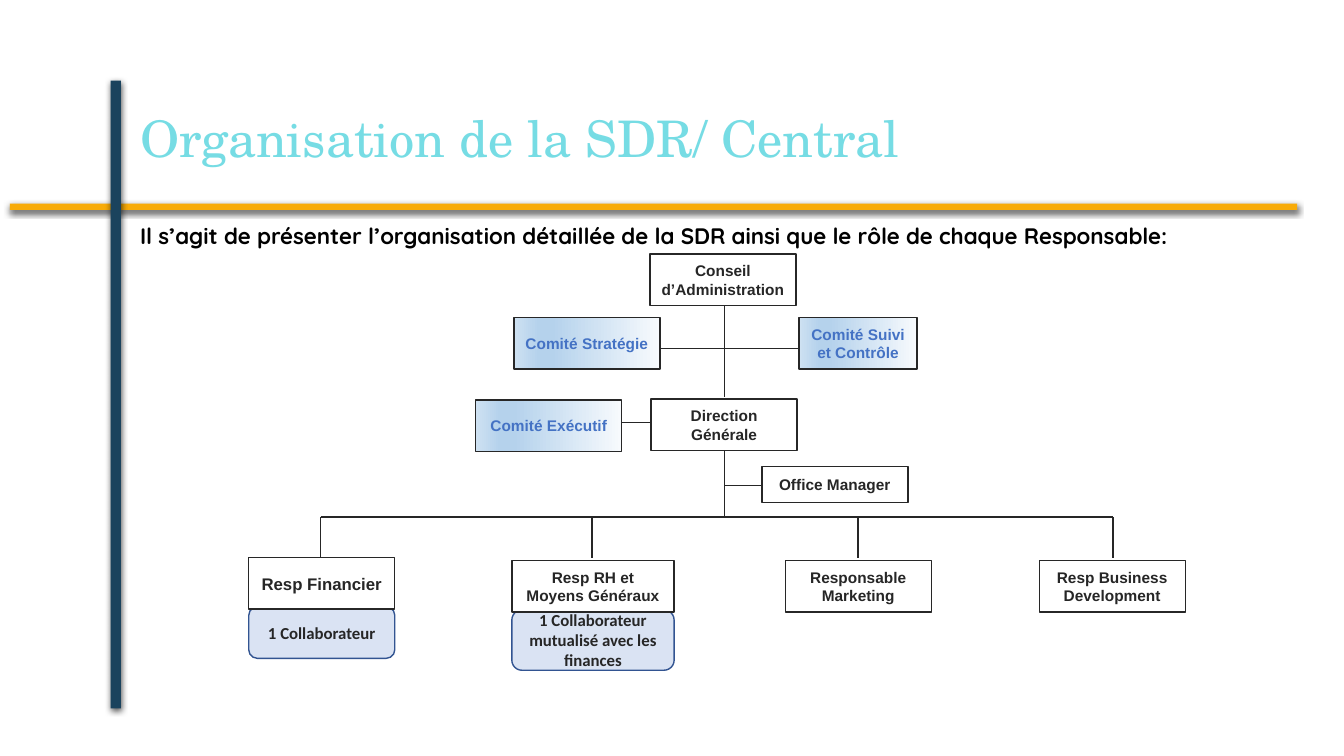
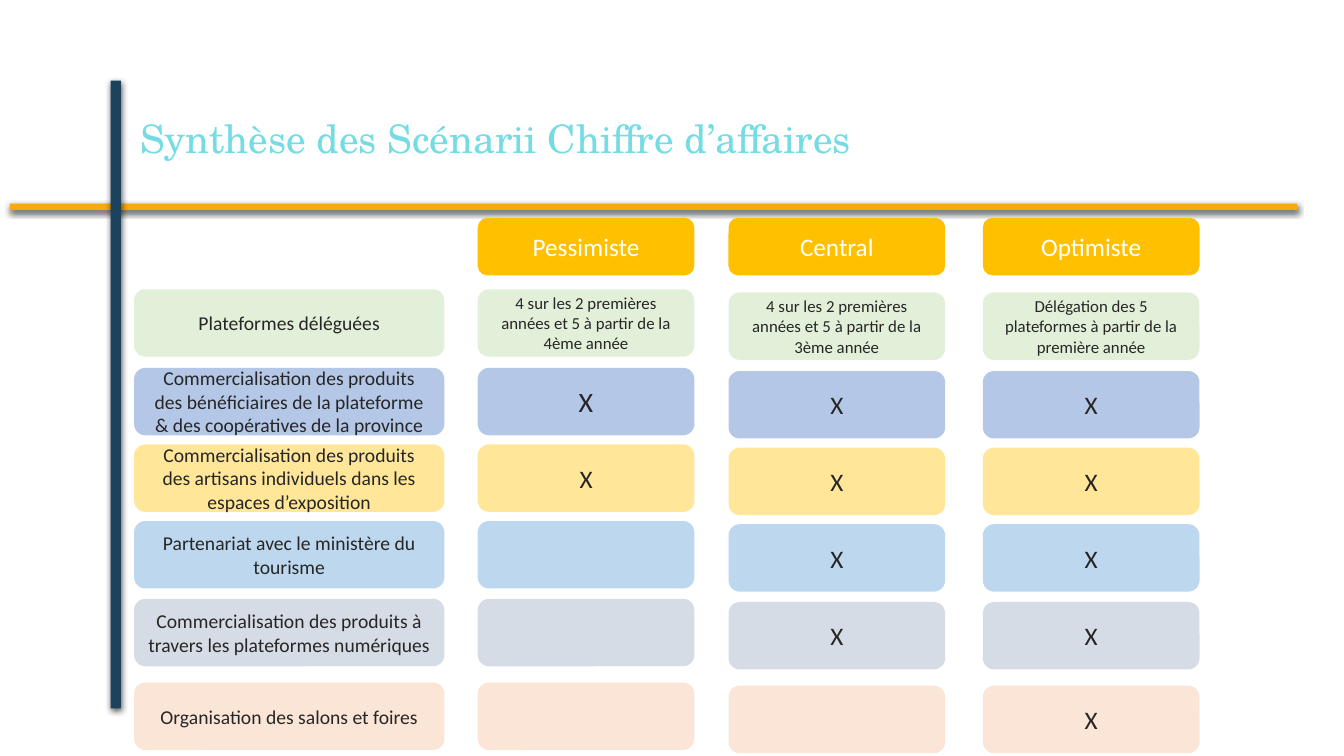
from dataclasses import dataclass

from lxml import etree
from pptx import Presentation
from pptx import util as u
from pptx.dml import color
from pptx.enum import shapes, text
from pptx.oxml import ns


@dataclass(frozen=True)
class Theme:
    gold: str = "F8AB08"
    navy: str = "1B435D"
    aqua: str = "76DCE4"
    ink: str = "262626"
    edge: str = "272727"
    white: str = "FFFFFF"
    black: str = "000000"
    blue: str = "4472C4"
    pale: str = "DAE3F3"
    rim: str = "325491"
    amber: str = "FFC000"
    fade: tuple = ((0, "F7FAFD"), (74, "B5D2EC"), (83, "B5D2EC"), (100, "CEE1F2"))
    serif: str = "TeX Gyre Schola"
    lead: str = "Quicksand"
    sans: str = "Arial"
    plain: str = "Calibri"
    small: float = 11
    note: float = 12
    label: float = 14
    intro: float = 16
    mark: float = 18
    large: float = 20
    title: float = 36
    subtle: float = 28
    thin: float = 1
    thick: float = 1.25


T = Theme()
RECT = shapes.MSO_SHAPE.RECTANGLE
ROUND = shapes.MSO_SHAPE.ROUNDED_RECTANGLE


def cm(*sizes):
    return [u.Cm(size) for size in sizes]


def rgb(code):
    return color.RGBColor.from_string(code)


def child(node, tag, **attrs):
    return etree.SubElement(node, ns.qn(tag), {k: str(v) for k, v in attrs.items()})


def write(para, words, size, font, tint, bold=False):
    run = para.add_run()
    run.text = words
    run.font.size = u.Pt(size)
    run.font.name = font
    run.font.bold = bold
    run.font.color.rgb = rgb(tint)


def blend(shape, stops):
    shape.fill.gradient()
    shape.fill.gradient_angle = 180
    group = shape.element.spPr.find(".//" + ns.qn("a:gsLst"))
    for stop in list(group):
        group.remove(stop)
    for place, code in stops:
        stop = child(group, "a:gs", pos=place * 1000)
        child(stop, "a:srgbClr", val=code)


def box(slide, kind, place, fill, line=None):
    shape = slide.shapes.add_shape(kind, *cm(*place))
    shape.shadow.inherit = False
    if isinstance(fill, tuple):
        blend(shape, fill)
    else:
        shape.fill.solid()
        shape.fill.fore_color.rgb = rgb(fill)
    if line:
        shape.line.color.rgb = rgb(line)
        shape.line.width = u.Pt(T.thin)
    else:
        shape.line.fill.background()
    return shape


def card(slide, kind, place, fill, line, words, size, font, tint, bold=False):
    frame = box(slide, kind, place, fill, line).text_frame
    frame.word_wrap = True
    frame.vertical_anchor = text.MSO_ANCHOR.MIDDLE
    para = frame.paragraphs[0]
    para.alignment = text.PP_ALIGN.CENTER
    if words:
        write(para, words, size, font, tint, bold)


def band(slide, place, fill):
    shape = box(slide, RECT, place, fill)
    glow = shape.element.spPr.find(ns.qn("a:effectLst"))
    shade = child(glow, "a:outerShdw", blurRad=u.Pt(4.5), dist=u.Pt(1.5),
                  dir=5400000, algn="ctr", rotWithShape=0)
    tone = child(shade, "a:srgbClr", val=T.black)
    child(tone, "a:alpha", val=63000)


def link(slide, start, end, width):
    wire = slide.shapes.add_connector(shapes.MSO_CONNECTOR.STRAIGHT, *cm(*start, *end))
    wire.line.color.rgb = rgb(T.ink)
    wire.line.width = u.Pt(width)
    child(wire.element.spPr, "a:effectLst")


def label(slide, place, anchor, *style):
    frame = slide.shapes.add_textbox(*cm(*place)).text_frame
    frame.word_wrap = True
    frame.vertical_anchor = anchor
    para = frame.paragraphs[0]
    para.line_spacing = 0.9
    write(para, *style)


def start(deck, title, size):
    slide = deck.slides.add_slide(deck.slide_layouts[6])
    band(slide, (0.25, 5.13, 32.44, 0.16), T.gold)
    band(slide, (2.79, 2.03, 0.26, 15.82), T.navy)
    label(slide, (3.28, 2.03, 29.21, 3.05), text.MSO_ANCHOR.MIDDLE,
          title, size, T.serif, T.aqua)
    return slide


def chart(deck):
    slide = start(deck, "Organisation de la SDR/ Central", T.title)
    label(slide, (3.28, 5.56, 29.21, 1.3), text.MSO_ANCHOR.TOP,
          "Il s’agit de présenter l’organisation détaillée de la SDR ainsi que "
          "le rôle de chaque Responsable:", T.intro, T.lead, T.black, True)

    helpers = [
        ((6.27, 15.29, 3.68, 1.3), "1 Collaborateur"),
        ((12.9, 15.37, 4.09, 1.52), "1 Collaborateur mutualisé avec les finances"),
    ]
    for place, words in helpers:
        card(slide, ROUND, place, T.pale, T.rim, words, T.note, T.plain, T.ink, True)

    trunk, bus = 18.26, 13.03
    drops = [8.08, 14.91, 21.62, 28.04]
    link(slide, (15.52, 10.64), (16.48, 10.64), T.thin)
    link(slide, (16.54, 8.79), (21.79, 8.79), T.thin)
    link(slide, (trunk, 12.24), (19.2, 12.24), T.thin)
    link(slide, (drops[0], bus), (drops[-1], bus), T.thin)
    link(slide, (trunk, 7.54), (trunk, 10.01), T.thick)
    link(slide, (trunk, 11.33), (trunk, bus), T.thick)
    for left in drops:
        link(slide, (left, bus), (left, 14.07), T.thick)

    boards = [
        ((20.14, 8, 2.97, 1.3), "Comité Suivi et Contrôle"),
        ((11.99, 10.08, 3.68, 1.3), "Comité Exécutif"),
        ((12.95, 8, 3.68, 1.3), "Comité Stratégie"),
    ]
    for place, words in boards:
        card(slide, RECT, place, T.fade, T.edge, words, T.small, T.sans, T.blue, True)

    posts = [
        ((16.38, 6.4, 3.68, 1.3), "Conseil d’Administration", T.small),
        ((16.41, 10.06, 3.68, 1.3), "Direction Générale", T.small),
        ((19.2, 11.76, 3.68, 0.91), "Office Manager", T.small),
        ((6.27, 14.05, 3.68, 1.3), "Resp Financier", T.note),
        ((12.9, 14.12, 4.09, 1.3), "Resp RH et Moyens Généraux", T.small),
        ((19.79, 14.12, 3.68, 1.3), "Responsable Marketing", T.small),
        ((26.19, 14.12, 3.68, 1.3), "Resp Business Development", T.small),
    ]
    for place, words, size in posts:
        card(slide, RECT, place, T.white, T.edge, words, size, T.sans, T.ink, True)


def matrix(deck):
    slide = start(deck, "Synthèse des Scénarii Chiffre d’affaires", T.subtle)
    cols = [(12.04, 0, "Pessimiste"), (18.36, 0.08, "Central"), (24.77, 0.08, "Optimiste")]
    wide, high = 5.46, 1.7
    for left, _, words in cols:
        card(slide, ROUND, (left, 5.49, wide, 1.45), T.amber, None,
             words, T.mark, T.plain, T.white)

    rows = [
        (7.29, "E2F0D9", "Plateformes déléguées",
         [("4 sur les 2 premières années et 5 à partir de la 4ème année", T.note),
          ("4 sur les 2 premières années et 5 à partir de la 3ème année", T.note),
          ("Délégation des 5 plateformes à partir de la première année", T.note)]),
        (9.27, "B4C7E7", "Commercialisation des produits des bénéficiaires de la "
         "plateforme & des coopératives de la province",
         [("X", T.large), ("X", T.mark), ("X", T.mark)]),
        (11.2, "FFE699", "Commercialisation des produits des artisans individuels "
         "dans les espaces d’exposition", [("X", T.mark)] * 3),
        (13.13, "BDD7EE", "Partenariat avec le ministère du tourisme",
         [("", T.mark), ("X", T.mark), ("X", T.mark)]),
        (15.09, "D6DCE5", "Commercialisation des produits à travers les plateformes "
         "numériques", [("", T.mark), ("X", T.mark), ("X", T.mark)]),
        (17.2, "FBE5D6", "Organisation des salons et foires",
         [("", T.mark), ("", T.mark), ("X", T.mark)]),
    ]
    for top, fill, name, cells in rows:
        card(slide, ROUND, (3.38, top, 7.82, high), fill, None,
             name, T.label, T.plain, T.ink)
        for (left, shift, _), (words, size) in zip(cols, cells):
            card(slide, ROUND, (left, top + shift, wide, high), fill, None,
                 words, size, T.plain, T.ink)


def main():
    deck = Presentation()
    deck.slide_width, deck.slide_height = cm(33.87, 19.05)
    chart(deck)
    matrix(deck)
    deck.save("out.pptx")


if __name__ == "__main__":
    main()
